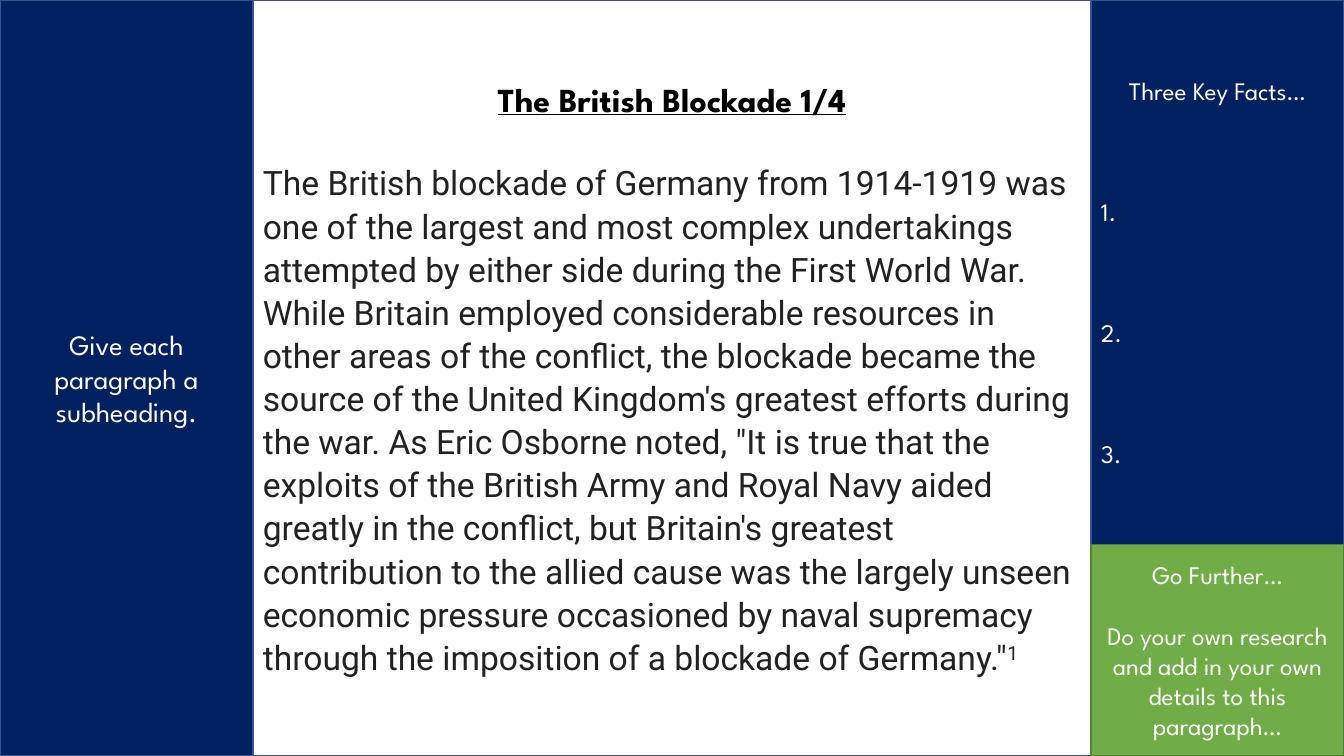
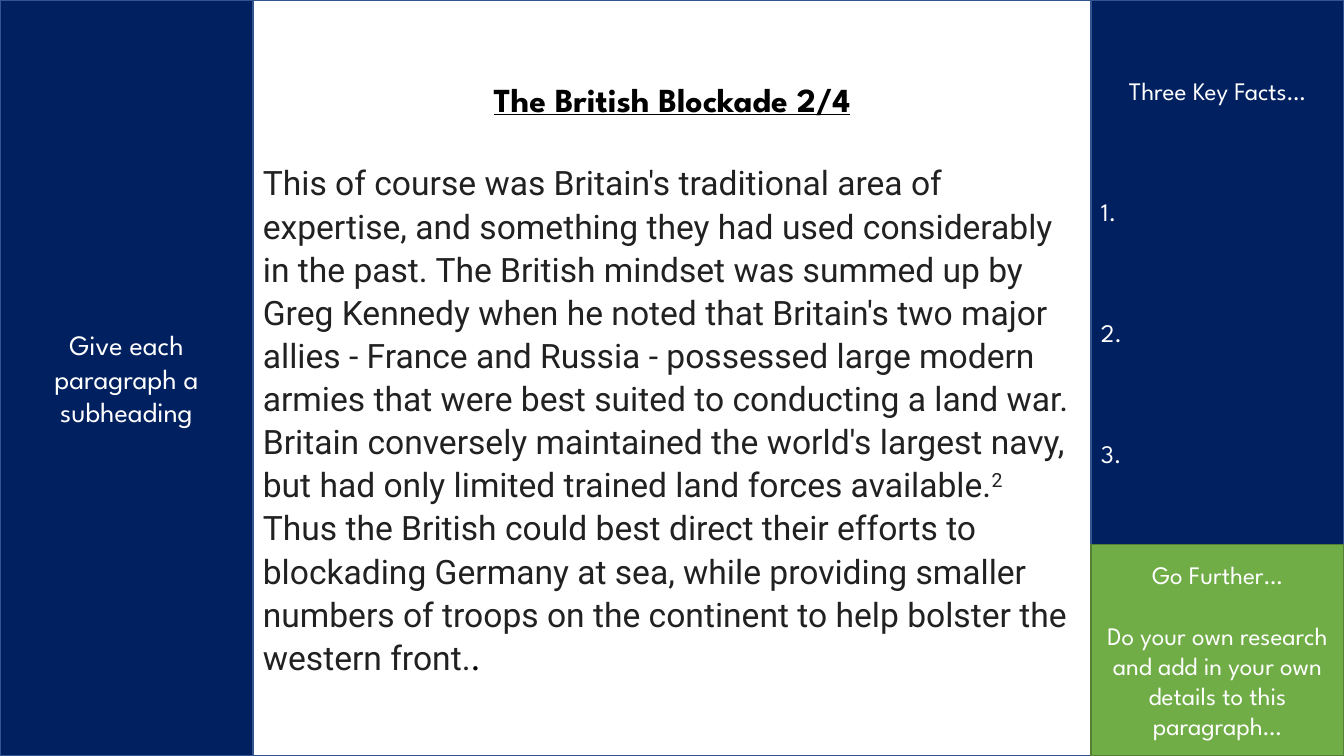
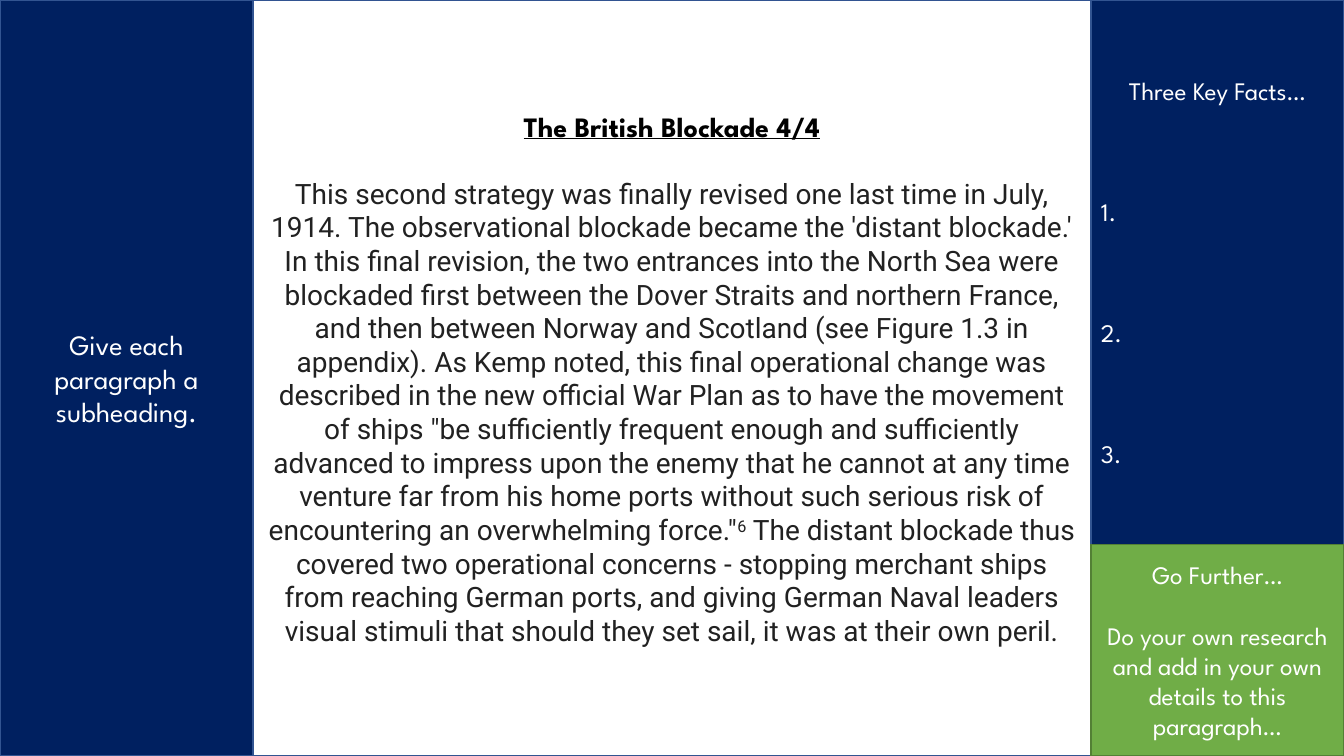
from dataclasses import dataclass

from pptx import Presentation
from pptx.dml.color import RGBColor
from pptx.enum.shapes import MSO_SHAPE as Shape
from pptx.enum.text import MSO_ANCHOR as Anchor, PP_ALIGN as Align
from pptx.slide import Slide
from pptx.text.text import Font
from pptx.util import Pt

WIDE, HIGH = 960, 540
SIDE = 180.72
SPLIT = 388.8
LINE = 1.2  # line height as a share of the text size

NAVY, GREEN, WHITE, BLACK, INK = "002060", "70AD47", "FFFFFF", "000000", "212121"
BLUE_EDGE, GREEN_EDGE = "325491", "538035"
HEAD_FONT, BODY_FONT = "League Spartan", "Roboto"


@dataclass(frozen=True)
class Run:
    text: str
    raised: bool = False
    font: str = ""
    color: str = ""


@dataclass(frozen=True)
class Para:
    runs: tuple[Run, ...]
    size: float
    font: str = HEAD_FONT
    color: str = WHITE
    align: Align = Align.CENTER
    gap: float = 0  # blank lines above
    title: bool = False
    spacing: float = 1.0
    after: float = 0


@dataclass(frozen=True)
class Panel:
    left: float
    top: float
    width: float
    height: float
    fill: str
    edge: str


@dataclass(frozen=True)
class Page:
    task: str
    number: int
    runs: tuple[Run, ...]
    size: float = 24
    align: Align = Align.LEFT
    spacing: float = 1.07
    after: float = 8


TASK = Panel(0, 0, SIDE, HIGH, NAVY, BLUE_EDGE)
FACTS = Panel(WIDE - SIDE, 0, SIDE, SPLIT, NAVY, BLUE_EDGE)
STORY = Panel(SIDE, 0, WIDE - 2 * SIDE, HIGH, WHITE, BLUE_EDGE)
EXTRA = Panel(WIDE - SIDE, SPLIT, SIDE, HIGH - SPLIT, GREEN, GREEN_EDGE)

PAGES = (
    Page("Give each paragraph a subheading.", 1, (
        Run("The British blockade of Germany from 1914-1919 was one of the largest "
            "and most complex undertakings attempted by either side during the First "
            "World War. While Britain employed considerable resources in other areas "
            "of the conflict, the blockade became the source of the United Kingdom's "
            "greatest efforts during the war. As Eric Osborne noted, \"It is true that "
            "the exploits of the British Army and Royal Navy aided greatly in the "
            "conflict, but Britain's greatest contribution to the allied cause was the "
            "largely unseen economic pressure occasioned by naval supremacy through "
            "the imposition of a blockade of Germany.\""),
        Run("1", raised=True),
    )),
    Page("Give each paragraph a subheading", 2, (
        Run("This of course was Britain's traditional area of expertise, and something "
            "they had used considerably in the past. The British mindset was summed up "
            "by Greg Kennedy when he noted that Britain's two major allies - France and "
            "Russia - possessed large modern armies that were best suited to conducting "
            "a land war. Britain conversely maintained the world's largest navy, but "
            "had only limited trained land forces available."),
        Run("2", raised=True),
        Run(" Thus the British could best direct their efforts to blockading Germany "
            "at sea, while providing smaller numbers of troops on the continent to help "
            "bolster the western front."),
        Run(".", font=HEAD_FONT, color=BLACK),
    )),
    Page("Give each paragraph a subheading.", 4, (
        Run("This second strategy was finally revised one last time in July, 1914. The "
            "observational blockade became the 'distant blockade.' In this final "
            "revision, the two entrances into the North Sea were blockaded first "
            "between the Dover Straits and northern France, and then between Norway and "
            "Scotland (see Figure 1.3 in appendix). As Kemp noted, this final "
            "operational change was described in the new official War Plan as to have "
            "the movement of ships \"be sufficiently frequent enough and sufficiently "
            "advanced to impress upon the enemy that he cannot at any time venture far "
            "from his home ports without such serious risk of encountering an "
            "overwhelming force.\""),
        Run("6", raised=True),
        Run(" The distant blockade thus covered two operational concerns - stopping "
            "merchant ships from reaching German ports, and giving German Naval leaders "
            "visual stimuli that should they set sail, it was at their own peril."),
    ), size=20, align=Align.CENTER, spacing=1.0, after=0),
)


def paint(code: str) -> RGBColor:
    return RGBColor.from_string(code)


def style(font: Font, name: str, color: str) -> None:
    if name:
        font.name = name
    if color:
        font.color.rgb = paint(color)


def plain(text: str, size: float, **rest) -> Para:
    """Make a paragraph of one run."""
    return Para((Run(text),), size, **rest)


def draw(slide: Slide, panel: Panel, paras: list[Para]) -> None:
    box = slide.shapes.add_shape(Shape.RECTANGLE, Pt(panel.left), Pt(panel.top),
                                 Pt(panel.width), Pt(panel.height))
    box.shadow.inherit = False
    box.fill.solid()
    box.fill.fore_color.rgb = paint(panel.fill)
    box.line.color.rgb = paint(panel.edge)
    box.line.width = Pt(1)
    frame = box.text_frame
    frame.word_wrap = True
    frame.vertical_anchor = Anchor.MIDDLE
    for i, para in enumerate(paras):
        line = frame.add_paragraph() if i else frame.paragraphs[0]
        line.alignment = para.align
        line.line_spacing = para.spacing
        line.space_before = Pt(para.gap * para.size * LINE)
        line.space_after = Pt(para.after)
        line.font.size = Pt(para.size)
        line.font.bold = line.font.underline = para.title
        style(line.font, para.font, para.color)
        for item in para.runs:
            run = line.add_run()
            run.text = item.text
            style(run.font, item.font, item.color)
            if item.raised:
                run.font._element.set("baseline", "30000")


def build(slide: Slide, page: Page) -> None:
    draw(slide, TASK, [plain(page.task, 20)])
    draw(slide, FACTS, [
        plain("Three Key Facts…", 18),
        *(plain(f"{n}.", 18, align=Align.LEFT, gap=3) for n in range(1, 4)),
    ])
    draw(slide, STORY, [
        plain(f"The British Blockade {page.number}/4", page.size, color=BLACK, title=True),
        Para(page.runs, page.size, BODY_FONT, INK, page.align, gap=1,
             spacing=page.spacing, after=page.after),
    ])
    draw(slide, EXTRA, [
        plain("Go Further…", 18),
        plain("Do your own research and add in your own details to this paragraph…",
              18, gap=1),
    ])


def main() -> None:
    deck = Presentation()
    deck.slide_width, deck.slide_height = Pt(WIDE), Pt(HIGH)
    for page in PAGES:
        build(deck.slides.add_slide(deck.slide_layouts[6]), page)
    deck.save("out.pptx")


if __name__ == "__main__":
    main()
